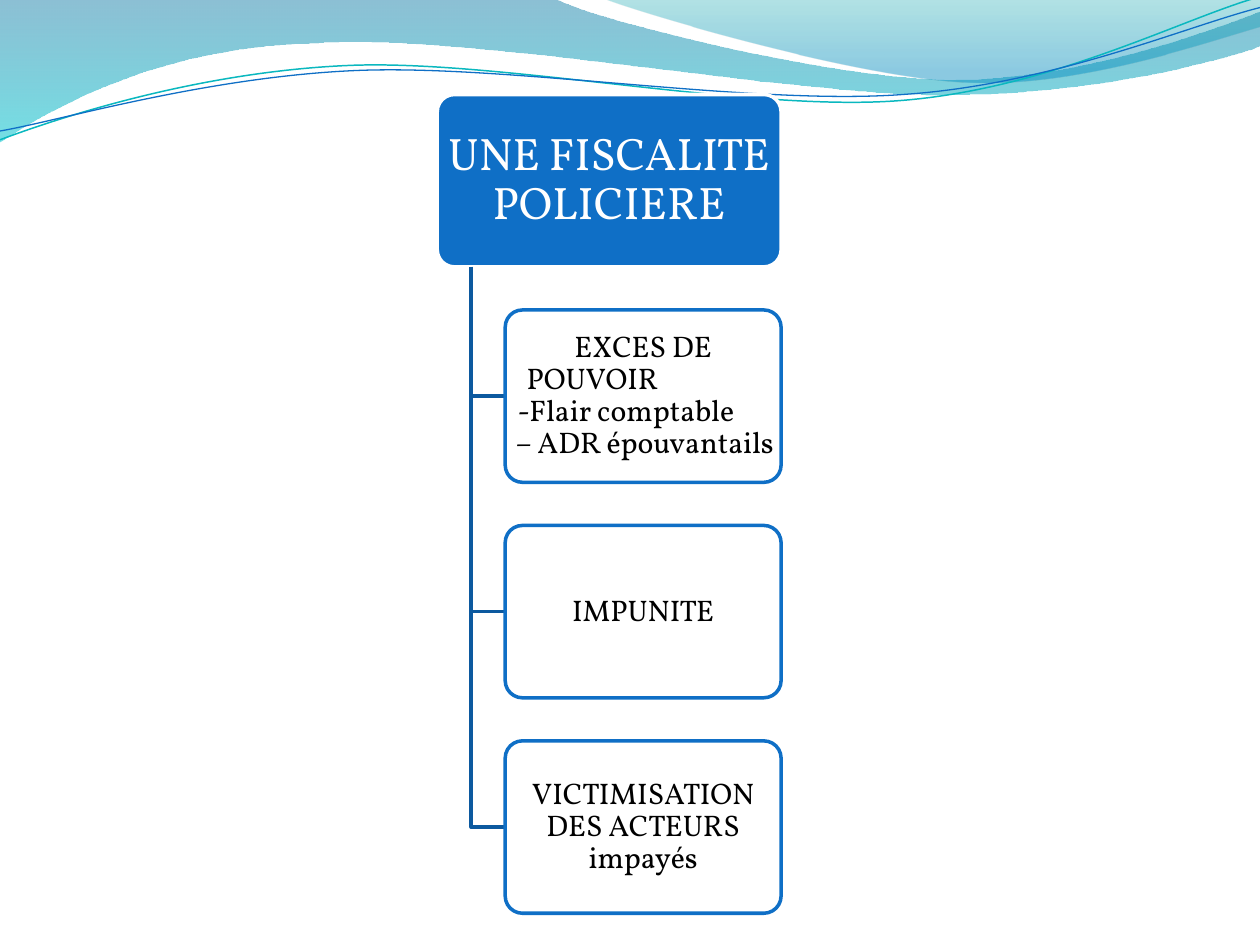
from dataclasses import dataclass
from typing import Optional

from lxml.etree import SubElement
from pptx import Presentation
from pptx.dml.color import RGBColor
from pptx.enum.shapes import MSO_SHAPE as Shape
from pptx.enum.text import MSO_ANCHOR as Anchor, PP_ALIGN as Align
from pptx.oxml.ns import qn
from pptx.util import Inches, Pt

W, H = 10, 7.5
LEFT, TOP = 0.347 * W, 0.1 * H
COL, ROW = 0.027 * W, 0.228 * H
ROOT_COLS, BOX_H = 10.11, 0.8 * ROW
FONT = "Vollkorn"

COLORS = {
    "blue": "0F6FC6", "link": "0C599F", "white": "FFFFFF", "black": "000000",
    "deep": "0074A1", "cyan": "00C6CF", "teal": "00A1A9", "sky": "008BBF",
    "thread": "0AB8BF",
}


@dataclass
class Stop:
    position: float
    color: str
    alpha: int


@dataclass
class Wave:
    start: tuple
    segments: list
    stops: Optional[list] = None
    line: Optional[tuple] = None


@dataclass
class Para:
    text: str
    align: Align = Align.CENTER
    indent: float = 0


@dataclass
class Box:
    col: int
    row: int
    paras: list
    size: int
    fill: str
    line: str
    font: str
    alpha: int = 100
    inset: float = 0


WAVES = [
    Wave((0, 0), [
        (4.4, -0.01), (4.76, 0.17, 6.64, 0.63, 7.58, 0.63),
        (8.53, 0.63, 9.58, 0.26, 10, 0.09), (10.01, 0.36),
        (9.83, 0.44, 8.7, 0.76, 7.46, 0.75),
        (6.22, 0.75, 3.82, 0.28, 2.57, 0.34),
        (1.29, 0.36, 0.46, 0.83, -0.01, 1.13),
    ], stops=[Stop(0, "deep", 45), Stop(1, "cyan", 55)]),
    Wave((4.79, -0.01), [
        (5.09, 0.11, 6.82, 0.62, 7.69, 0.65),
        (8.56, 0.69, 9.61, 0.32, 10, 0.21), (10, 0),
    ], stops=[Stop(0, "teal", 30), Stop(0.8, "sky", 45)]),
    Wave((0, 1.11), [
        (0.48, 0.93, 1.58, 0.57, 2.77, 0.52),
        (3.95, 0.47, 5.93, 0.89, 7.13, 0.8),
        (8.33, 0.71, 9.38, 0.15, 9.98, -0.02),
    ], line=("thread", 0.85)),
    Wave((0, 1.04), [
        (0.47, 0.96, 1.64, 0.61, 2.83, 0.56),
        (4.03, 0.51, 5.97, 0.84, 7.17, 0.75),
        (8.36, 0.67, 9.41, 0.21, 10, 0.06),
    ], line=("blue", 0.75)),
]

ROOT = Box(0, 0, [Para("UNE FISCALITE POLICIERE")], 26,
           "blue", "white", "white", inset=0.01)
CHILD_TEXTS = [
    [Para("EXCES DE"), Para("POUVOIR", Align.LEFT, 0.13),
     Para("-Flair comptable", Align.LEFT, 0.06),
     Para("– ADR épouvantails", Align.LEFT, 0.04)],
    [Para("IMPUNITE")],
    [Para("VICTIMISATION DES ACTEURS impayés")],
]
CHILDREN = [Box(2, row, paras, 17, "white", "blue", "black", alpha=90)
            for row, paras in enumerate(CHILD_TEXTS, 1)]


def rgb(name: str) -> RGBColor:
    return RGBColor.from_string(COLORS[name])


def set_all(obj, values: dict) -> None:
    for name, value in values.items():
        setattr(obj, name, value)


def set_alpha(fill_element, percents: list) -> None:
    for color, percent in zip(fill_element.iter(qn("a:srgbClr")), percents):
        SubElement(color, qn("a:alpha"), val=str(percent * 1000))


def set_line(sp, color: str, width: float) -> None:
    sp.line.color.rgb = rgb(color)
    sp.line.width = Pt(width)


def bend(sp, segments: list) -> None:
    steps = iter(list(sp._element.iter(qn("a:lnTo"))))
    for seg in segments:
        first = next(steps)
        if len(seg) == 6:
            curve = first.makeelement(qn("a:cubicBezTo"))
            first.addprevious(curve)
            for step in (first, next(steps), next(steps)):
                curve.append(step[0])
                step.getparent().remove(step)


def add_outline(s, start: tuple, segments: list, close: bool = False):
    points = [start] + [seg[i:i + 2] for seg in segments for i in range(0, len(seg), 2)]
    emus = [(Inches(x), Inches(y)) for x, y in points]
    builder = s.shapes.build_freeform(*emus[0], scale=1)
    builder.add_line_segments(emus[1:], close=close)
    sp = builder.convert_to_shape()
    bend(sp, segments)
    sp.shadow.inherit = False
    sp.fill.background()
    return sp


def add_wave(s, wave: Wave) -> None:
    sp = add_outline(s, wave.start, wave.segments, bool(wave.stops))
    if wave.line:
        set_line(sp, *wave.line)
        return
    sp.line.fill.background()
    sp.fill.gradient()
    sp.fill.gradient_angle = 270
    for target, stop in zip(sp.fill.gradient_stops, wave.stops):
        target.color.rgb = rgb(stop.color)
        target.position = stop.position
    set_alpha(sp._element.spPr.find(qn("a:gradFill")), [x.alpha for x in wave.stops])


def add_box(s, box: Box) -> None:
    bounds = (LEFT + box.col * COL, TOP + box.row * ROW,
              (ROOT_COLS - box.col) * COL, BOX_H)
    sp = s.shapes.add_shape(Shape.ROUNDED_RECTANGLE, *map(Inches, bounds))
    sp.adjustments[0] = 0.1
    sp.shadow.inherit = False
    sp.fill.solid()
    sp.fill.fore_color.rgb = rgb(box.fill)
    if box.alpha < 100:
        set_alpha(sp._element.spPr.find(qn("a:solidFill")), [box.alpha])
    set_line(sp, box.line, 2)
    tf = sp.text_frame
    inset = Inches(box.inset)
    set_all(tf, {"word_wrap": True, "vertical_anchor": Anchor.MIDDLE,
                 "margin_left": inset, "margin_right": inset,
                 "margin_top": 0, "margin_bottom": 0})
    for i, para in enumerate(box.paras):
        p = tf.add_paragraph() if i else tf.paragraphs[0]
        set_all(p, {"alignment": para.align, "line_spacing": 0.9,
                    "space_after": Pt(0)})
        if para.indent:
            p._p.get_or_add_pPr().set("marL", str(Inches(para.indent)))
        r = p.add_run()
        r.text = para.text
        set_all(r.font, {"name": FONT, "size": Pt(box.size)})
        r.font.color.rgb = rgb(box.font)


def add_link(s, box: Box) -> None:
    trunk = LEFT + COL
    middle = TOP + box.row * ROW + BOX_H / 2
    corner, end = (trunk, middle), (LEFT + box.col * COL, middle)
    set_line(add_outline(s, (trunk, TOP + BOX_H), [corner, end]), "link", 2)


def main() -> None:
    prs = Presentation()
    set_all(prs, {"slide_width": Inches(W), "slide_height": Inches(H)})
    s = prs.slides.add_slide(prs.slide_layouts[6])
    for wave in WAVES:
        add_wave(s, wave)
    add_box(s, ROOT)
    for child in CHILDREN:
        add_link(s, child)
        add_box(s, child)
    prs.save("out.pptx")


if __name__ == "__main__":
    main()
